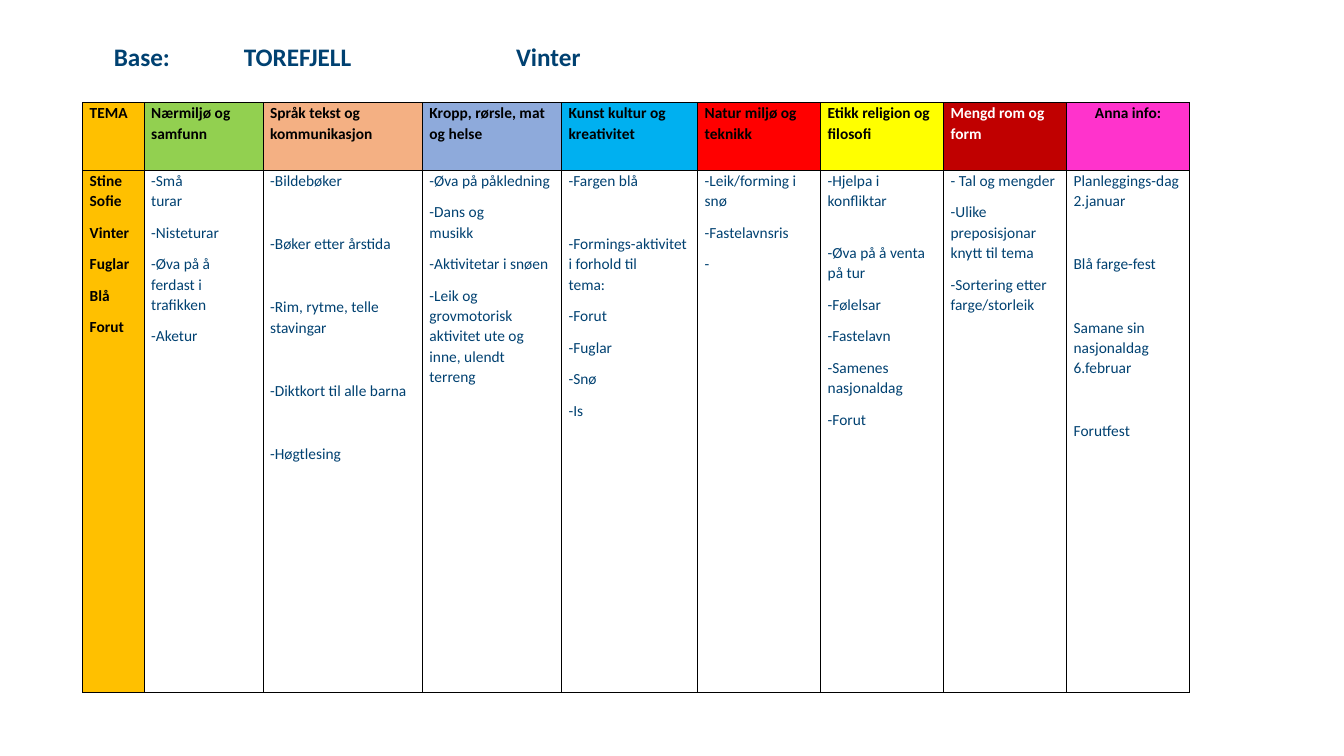
import pptx
import pptx.util
import pptx.dml.color
import pptx.enum.text
from lxml import etree

Inches = pptx.util.Inches
Pt = pptx.util.Pt

COLORS = {
    "black": "000000", "white": "FFFFFF", "navy": "004171", "gold": "FFC000",
    "green": "92D050", "peach": "F4B083", "steel": "8EAADB", "sky": "00B0F0",
    "red": "FF0000", "yellow": "FFFF00", "wine": "C00000", "pink": "FF33CC",
}
TITLE = "Base:\tTOREFJELL\tVinter"
STOPS = [1.29, 3.99]
LINE = 14.5
GAP = 22.6

# Each topic: heading, fill, width, items, space before later items
TOPICS = [
    ("TEMA", "gold", 0.61, ["Stine Sofie", "Vinter", "Fuglar", "Blå", "Forut"], {}),
    ("Nærmiljø og samfunn", "green", 1.18,
     ["-Små\vturar", "-Nisteturar", "-Øva på å ferdast i trafikken", "-Aketur"], {}),
    ("Språk tekst og kommunikasjon", "peach", 1.58,
     ["-Bildebøker", "-Bøker etter årstida", "-Rim, rytme, telle stavingar",
      "-Diktkort til alle barna", "-Høgtlesing"],
     {1: GAP, 2: GAP, 3: GAP, 4: GAP}),
    ("Kropp, rørsle, mat og helse", "steel", 1.38,
     ["-Øva på påkledning", "-Dans og\vmusikk", "-Aktivitetar i snøen",
      "-Leik og grovmotorisk aktivitet ute og inne, ulendt terreng"], {}),
    ("Kunst kultur og kreativitet", "sky", 1.35,
     ["-Fargen blå", "-Formings-aktivitet i forhold til\vtema:",
      "-Forut", "-Fuglar", "-Snø", "-Is"], {1: GAP}),
    ("Natur miljø og teknikk", "red", 1.22,
     ["-Leik/forming i snø", "-Fastelavnsris", "-"], {}),
    ("Etikk religion og filosofi", "yellow", 1.22,
     ["-Hjelpa i\vkonfliktar", "-Øva på å venta på tur", "-Følelsar",
      "-Fastelavn", "-Samenes nasjonaldag", "-Forut"], {1: LINE}),
    ("Mengd rom og form", "wine", 1.22,
     ["- Tal og mengder", "-Ulike preposisjonar knytt til tema",
      "-Sortering etter farge/storleik"], {}),
    ("Anna info:", "pink", 1.22,
     ["Planleggings-dag 2.januar", "Blå farge-fest",
      "Samane sin nasjonaldag 6.februar", "Forutfest"],
     {1: GAP, 2: GAP, 3: GAP}),
]
ROWS = [0.67, 5.18]
NS = "http://schemas.openxmlformats.org/drawingml/2006/main"


def rgb(name):
    return pptx.dml.color.RGBColor.from_string(COLORS[name])


def style(para, size, color, bold):
    for run in para.runs:
        font = run.font
        font.name, font.size, font.bold = "Calibri", Pt(size), bold
        font.color.rgb = rgb(color)


def border(cell):
    props = cell._tc.get_or_add_tcPr()
    for side in ("lnL", "lnR", "lnT", "lnB"):
        line = etree.SubElement(props, f"{{{NS}}}{side}", w=str(Pt(1)))
        fill = etree.SubElement(line, f"{{{NS}}}solidFill")
        etree.SubElement(fill, f"{{{NS}}}srgbClr", val=COLORS["black"])


def write(cell, items, gaps, fill, color, bold):
    border(cell)
    cell.fill.solid()
    cell.fill.fore_color.rgb = rgb(fill)
    cell.margin_left = cell.margin_right = Inches(0.07)
    cell.margin_top = cell.margin_bottom = 0
    cell.text_frame.text = "\n".join(items)
    for i, para in enumerate(cell.text_frame.paragraphs):
        para.line_spacing = 1.07
        para.space_after = Pt(8)
        if i in gaps:
            para.space_before = Pt(gaps[i])
        style(para, 11, color, bold)


def add_plan(slide):
    width = sum(topic[2] for topic in TOPICS)
    table = slide.shapes.add_table(
        len(ROWS), len(TOPICS), Inches(0.82), Inches(1.02),
        Inches(width), Inches(sum(ROWS))).table
    table.first_row = table.horz_banding = False
    for row, height in zip(table.rows, ROWS):
        row.height = Inches(height)
    for i, (head, fill, wide, items, gaps) in enumerate(TOPICS):
        table.columns[i].width = Inches(wide)
        ink = "white" if fill == "wine" else "black"
        write(table.cell(0, i), [head], {}, fill, ink, True)
        if i == 0:
            write(table.cell(1, i), items, gaps, fill, "black", True)
        else:
            write(table.cell(1, i), items, gaps, "white", "navy", False)
    last = table.cell(0, len(TOPICS) - 1).text_frame.paragraphs[0]
    last.alignment = pptx.enum.text.PP_ALIGN.CENTER


def add_title(slide):
    box = slide.shapes.add_textbox(
        Inches(1.03), Inches(0.32), Inches(12.99), Inches(1.18))
    frame = box.text_frame
    frame.word_wrap = True
    frame.margin_top = Inches(0.09)
    frame.text = TITLE
    para = frame.paragraphs[0]
    tabs = etree.SubElement(para._p.get_or_add_pPr(), f"{{{NS}}}tabLst")
    for stop in STOPS:
        etree.SubElement(tabs, f"{{{NS}}}tab", pos=str(Inches(stop)), algn="l")
    style(para, 18, "navy", True)


def main():
    deck = pptx.Presentation()
    deck.slide_width, deck.slide_height = Inches(13.33), Inches(7.5)
    slide = deck.slides.add_slide(deck.slide_layouts[6])
    add_plan(slide)
    add_title(slide)
    deck.save("out.pptx")


if __name__ == "__main__":
    main()
